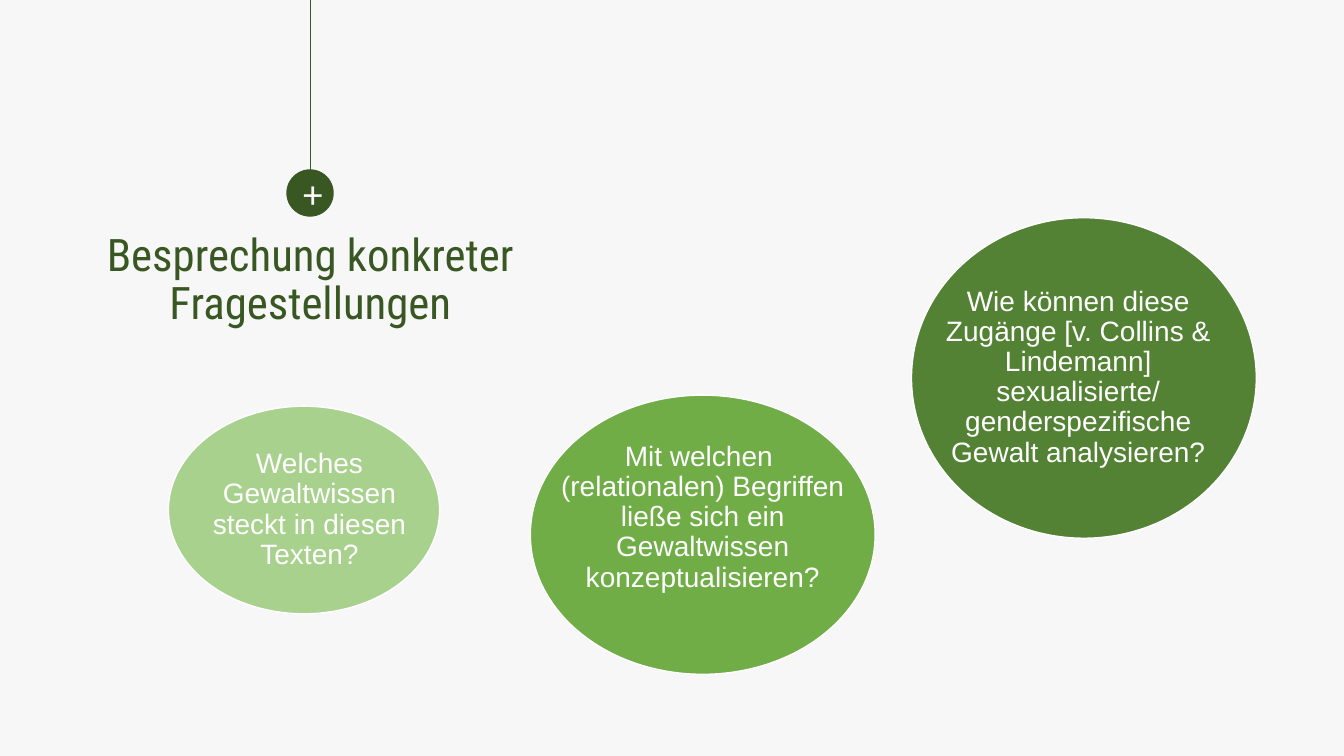
from lxml import etree
from pptx import Presentation
from pptx.dml.color import RGBColor
from pptx.enum.shapes import MSO_CONNECTOR, MSO_SHAPE
from pptx.enum.text import MSO_ANCHOR, PP_ALIGN
from pptx.oxml.ns import qn
from pptx.util import Inches, Pt

COLORS = {
    "background": "F7F7F7",
    "dark": "385723",
    "white": "FFFFFF",
    "light_green": "A9D18E",
    "mid_green": "70AD47",
    "deep_green": "548235",
}

# Ellipse box, text box, bottom inset, fill, question
QUESTIONS = [
    ((1.67, 4.03, 2.69, 2.06), (1.89, 4.33, 2.36, 1.46), 0.01, "light_green",
     "Welches Gewaltwissen steckt in diesen Texten?"),
    ((5.26, 3.92, 3.42, 2.77), (5.52, 4.23, 2.9, 2.15), 0.35, "mid_green",
     "Mit welchen \v(relationalen) Begriffen ließe sich ein Gewaltwissen "
     "konzeptualisieren?"),
    ((9.04, 2.16, 3.42, 3.18), (9.21, 2.62, 2.97, 2.25), 0.01, "deep_green",
     "Wie können diese Zugänge [v. Collins & Lindemann] sexualisierte/ "
     "genderspezifische Gewalt analysieren?"),
]


def rgb(name):
    return RGBColor.from_string(COLORS[name])


def inches(box):
    return [Inches(length) for length in box]


def write(frame, text, size, font, color, spacing=None):
    """Set centred text in one format."""
    frame.word_wrap = True
    frame.vertical_anchor = MSO_ANCHOR.MIDDLE
    paragraph = frame.paragraphs[0]
    paragraph.text = text
    paragraph.alignment = PP_ALIGN.CENTER
    if spacing:
        paragraph.line_spacing = spacing
    for run in paragraph.runs:
        run.font.size = Pt(size)
        run.font.name = font
        run.font.color.rgb = rgb(color)


def add_ellipse(shapes, box, fill, outline=None):
    ellipse = shapes.add_shape(MSO_SHAPE.OVAL, *inches(box))
    ellipse.shadow.inherit = False
    ellipse.fill.solid()
    ellipse.fill.fore_color.rgb = rgb(fill)
    if outline:
        ellipse.line.color.rgb = rgb(outline)
        ellipse.line.width = Pt(1)
    else:
        ellipse.line.fill.background()
    return ellipse


def add_pendulum(shapes, box):
    """Plus badge hanging from the top edge of the slide."""
    left, top, width, _ = box
    badge = add_ellipse(shapes, box, "dark")
    write(badge.text_frame, "+", 28, "Calibri", "white")
    center = Inches(left + width / 2)
    cord = shapes.add_connector(
        MSO_CONNECTOR.STRAIGHT, center, 0, center, Inches(top + 0.12))
    cord.line.color.rgb = rgb("dark")
    cord.line.width = Pt(0.5)
    etree.SubElement(cord._element.spPr, qn("a:effectLst"))


def add_heading(shapes, box):
    heading = shapes.add_textbox(*inches(box))
    write(heading.text_frame, "Besprechung konkreter Fragestellungen",
          32, "Roboto Condensed", "dark", 0.9)


def add_question(shapes, box, text_box, bottom_inset, fill, text):
    group = shapes.add_group_shape()
    add_ellipse(group.shapes, box, fill, "white")
    frame = group.shapes.add_textbox(*inches(text_box)).text_frame
    frame.margin_left = frame.margin_right = frame.margin_top = Inches(0.01)
    frame.margin_bottom = Inches(bottom_inset)
    write(frame, text, 20, "Arial", "white", 0.9)


def main():
    presentation = Presentation()
    presentation.slide_width = Inches(13.33)
    presentation.slide_height = Inches(7.5)
    slide = presentation.slides.add_slide(presentation.slide_layouts[6])
    slide.background.fill.solid()
    slide.background.fill.fore_color.rgb = rgb("background")
    add_pendulum(slide.shapes, (2.84, 1.68, 0.47, 0.47))
    add_heading(slide.shapes, (0.29, 2.16, 5.58, 1.26))
    for question in QUESTIONS:
        add_question(slide.shapes, *question)
    presentation.save("out.pptx")


if __name__ == "__main__":
    main()
